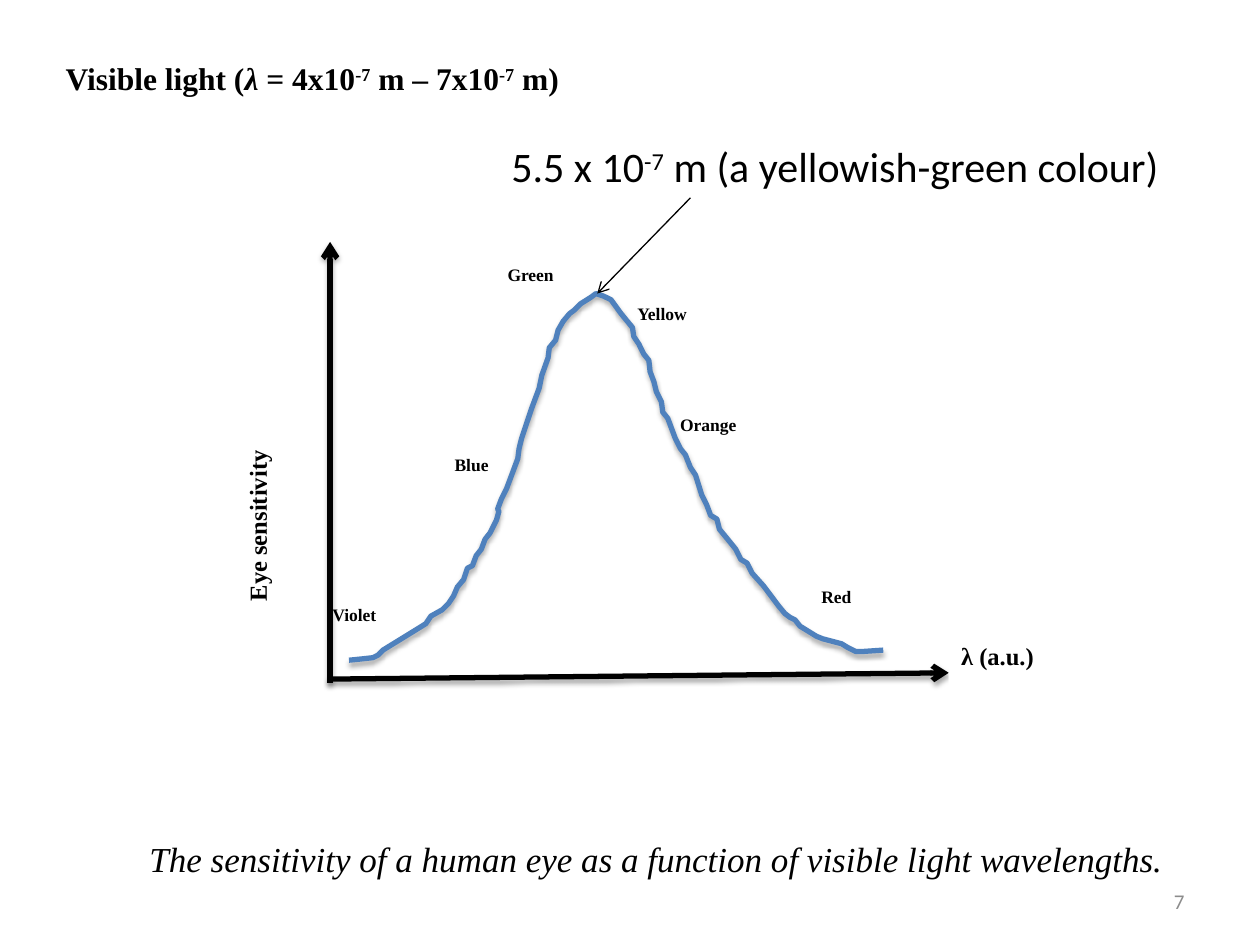
"""Build a slide on the eye's sensitivity to visible light."""
from lxml import etree
from pptx import Presentation
from pptx.dml.color import RGBColor
from pptx.enum.shapes import MSO_CONNECTOR, MSO_SHAPE
from pptx.enum.text import MSO_ANCHOR, PP_ALIGN
from pptx.oxml.ns import qn
from pptx.util import Inches, Pt

LEFT, MID, RIGHT = PP_ALIGN.LEFT, PP_ALIGN.CENTER, PP_ALIGN.RIGHT
TOP, MIDDLE = MSO_ANCHOR.TOP, MSO_ANCHOR.MIDDLE
STRAIGHT, RECT = MSO_CONNECTOR.STRAIGHT, MSO_SHAPE.RECTANGLE
SERIF, SANS = "Times New Roman", "Calibri"
BLACK, WHITE, BLUE, GREY = "000000", "FFFFFF", "4F81BD", "8C8C8C"

TITLE = [("Visible light (", ""), ("λ", "italic"), (" = 4x10", ""), ("-7", "super"),
         (" m – 7x10", ""), ("-7", "super"), (" m)", "")]
PEAK = [("5.5 x 10", ""), ("-7", "super"), (" m (a yellowish-green colour)", "")]
CAPTION = [("The sensitivity of a human eye as a function of visible light wavelengths.",
            "italic")]
COLOURS = {
    "Green": (3.93, 2.02), "Yellow": (4.96, 2.33), "Red": (6.42, 4.58),
    "Violet": (2.54, 4.72), "Blue": (3.51, 3.53), "Orange": (5.3, 3.21),
}
LABEL = (1.04, 0.67)
AXES = [((2.6, 5.39), (7.53, 5.34)), ((2.62, 5.42), (2.62, 1.92))]
POINTER = ((5.48, 1.57), (4.74, 2.33))
# Curve points are in hundredths of an inch.
CURVE = [
    (277, 524), (287, 523), (296, 522), (300, 520), (304, 516), (317, 508), (330, 500),
    (338, 495), (342, 489), (351, 484), (356, 479), (360, 473), (363, 466), (368, 460),
    (371, 451), (375, 449), (378, 441), (382, 436), (385, 428), (389, 423), (394, 413),
    (396, 406), (395, 404), (398, 396), (402, 388), (408, 372), (411, 364), (412, 356),
    (414, 348), (422, 324), (428, 308), (430, 298), (435, 284), (436, 276), (441, 270),
    (443, 262), (447, 555 - 300), (452, 249), (456, 246), (461, 241), (469, 236),
    (473, 233), (479, 235), (485, 238), (493, 249), (502, 260), (503, 267), (507, 273),
    (511, 281), (515, 286), (516, 295), (519, 303), (521, 311), (525, 319), (526, 327),
    (530, 332), (536, 348), (540, 356), (544, 361), (548, 371), (552, 377), (557, 393),
    (561, 401), (564, 409), (569, 412), (571, 420), (580, 431), (584, 436), (588, 444),
    (593, 447), (597, 455), (606, 465), (618, 481), (623, 487), (627, 490), (631, 492),
    (635, 497), (648, 505), (653, 507), (668, 511), (673, 514), (679, 517), (686, 517),
    (701, 516),
]


def paint(hue):
    return RGBColor.from_string(hue)


def write(shape, runs, size, font=SERIF, hue=BLACK, bold=False, align=LEFT,
          anchor=TOP, wrap=True, space=None):
    frame = shape.text_frame
    frame.word_wrap, frame.vertical_anchor = wrap, anchor
    para = frame.paragraphs[0]
    para.alignment = align
    if space:
        para.line_spacing, para.space_after = space, Pt(10)
    for text, style in runs:
        run = para.add_run()
        run.text = text
        face = run.font
        face.name, face.size, face.bold = font, Pt(size), bold
        face.italic = style == "italic"
        face.color.rgb = paint(hue)
        if style == "super":
            run._r.get_or_add_rPr().set("baseline", "30000")


def stroke(shape, hue, width, arrow=False, shade=False):
    shape.line.color.rgb = paint(hue)
    shape.line.width = Pt(width)
    if arrow:
        etree.SubElement(shape.line._get_or_add_ln(), qn("a:tailEnd"), type="arrow")
    effect = etree.SubElement(shape._element.spPr, qn("a:effectLst"))
    if shade:
        drop = etree.SubElement(effect, qn("a:outerShdw"), blurRad=str(Pt(3.1)),
                                dist=str(Pt(1.8)), dir="5400000", rotWithShape="0")
        tint = etree.SubElement(drop, qn("a:srgbClr"), val=BLACK)
        etree.SubElement(tint, qn("a:alpha"), val="35000")


def main():
    deck = Presentation()
    deck.slide_width, deck.slide_height = Inches(10), Inches(7.5)
    slide = deck.slides.add_slide(deck.slide_layouts[5])
    shapes = slide.shapes

    def box(*place):
        return shapes.add_textbox(*map(Inches, place))

    def line(ends, width, shade):
        (x1, y1), (x2, y2) = ends
        link = shapes.add_connector(STRAIGHT, *map(Inches, (x1, y1, x2, y2)))
        stroke(link, BLACK, width, arrow=True, shade=shade)

    title = shapes.title
    title.left, title.top, title.width, title.height = map(Inches, (0.42, 0.42, 4.32, 0.4))
    write(title, TITLE, 18, bold=True, wrap=False)
    write(box(3.96, 1.07, 5.4, 0.5), PEAK, 24, font=SANS, wrap=False)

    for ends in AXES:
        line(ends, 3, True)
    pen = shapes.build_freeform(*CURVE[0], scale=Inches(0.01))
    pen.add_line_segments(CURVE[1:], close=False)
    curve = pen.convert_to_shape()
    curve.fill.background()
    stroke(curve, BLUE, 3, shade=True)

    across = shapes.add_shape(RECT, *map(Inches, (7.53, 5, 1.34, 0.75)))
    across.shadow.inherit = False
    across.fill.solid()
    across.fill.fore_color.rgb = paint(WHITE)
    across.line.fill.background()
    write(across, [("λ (a.u.)", "")], 14, bold=True, space=1.15)
    upright = box(0.97, 3.2, 2.54, 0.8)
    upright.rotation = 270
    write(upright, [("Eye sensitivity", "")], 14, bold=True, space=1.15)
    for name, spot in COLOURS.items():
        write(box(*spot, *LABEL), [(name, "")], 10, bold=True, space=1.15)

    write(box(0.81, 6.6, 8.8, 0.42), CAPTION, 20, align=MID, anchor=MIDDLE, wrap=False)
    line(POINTER, 0.75, False)
    write(box(7.17, 6.95, 2.33, 0.4), [("7", "")], 12, font=SANS, hue=GREY,
          align=RIGHT, anchor=MIDDLE)
    deck.save("out.pptx")


if __name__ == "__main__":
    main()
